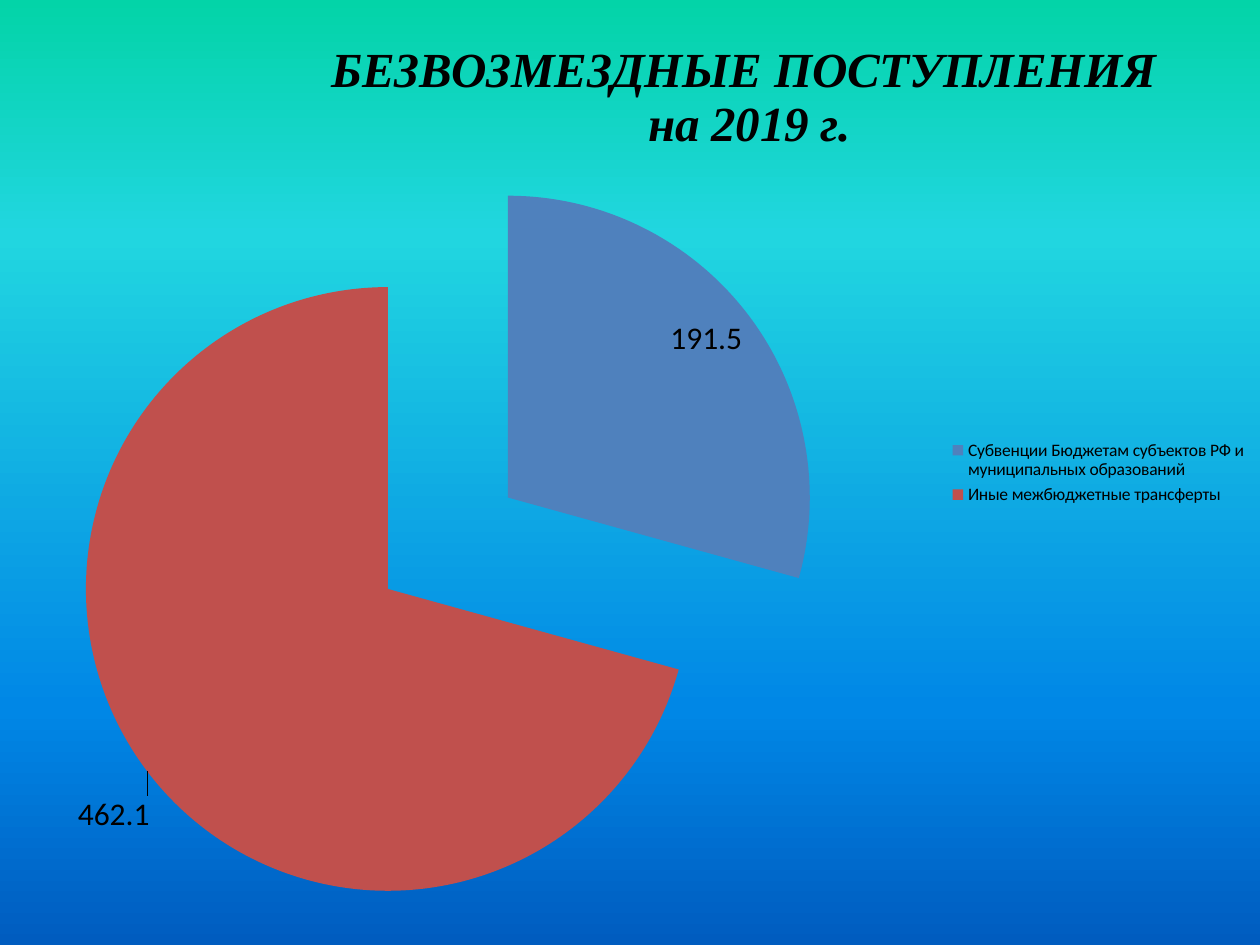
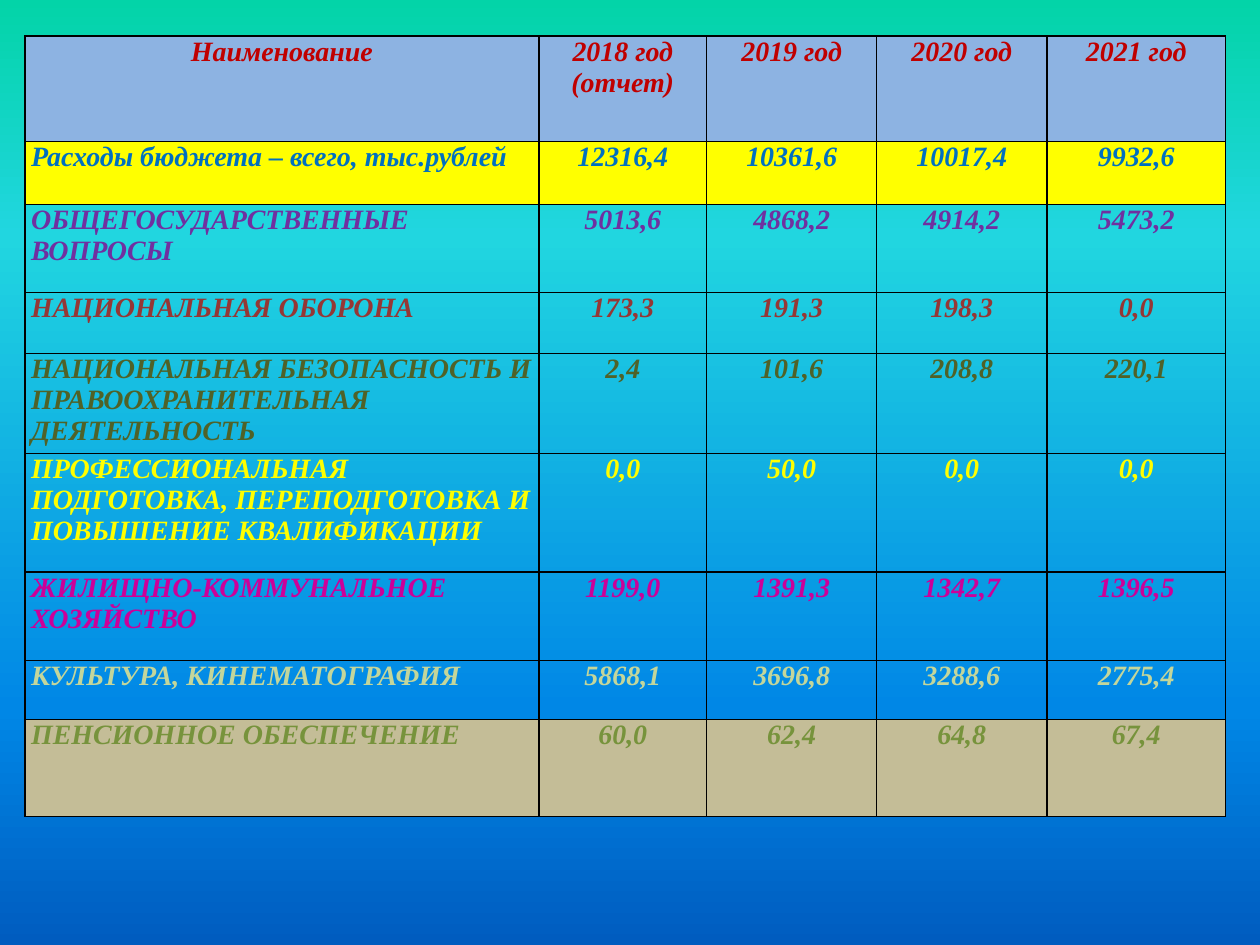
from lxml import etree
from pptx import Presentation
from pptx.chart import data as chart_data
from pptx.dml import color
from pptx.enum import chart as chart_enum, text
from pptx.oxml import ns, xmlchemy
from pptx.util import Pt

RGB = color.RGBColor
BLACK = RGB(0x00, 0x00, 0x00)
BLUE, RED = RGB(0x4F, 0x81, 0xBD), RGB(0xC0, 0x50, 0x4D)
HEADER_FILL, HEADER_TEXT = RGB(0x8D, 0xB3, 0xE2), RGB(0xC0, 0x00, 0x00)
YELLOW, TOTAL_TEXT = RGB(0xFF, 0xFF, 0x00), RGB(0x00, 0x70, 0xC0)
PURPLE, BROWN = RGB(0x70, 0x30, 0xA0), RGB(0x95, 0x37, 0x35)
DARK_GREEN, MAGENTA = RGB(0x4F, 0x62, 0x28), RGB(0xCC, 0x00, 0x99)
PALE_GREEN, OLIVE = RGB(0xC3, 0xD6, 0x9B), RGB(0x77, 0x93, 0x3C)
TAN = RGB(0xC4, 0xBD, 0x97)
BACKGROUND_STOPS = [
    (0, RGB(0x03, 0xD4, 0xA8)),
    (25, RGB(0x21, 0xD6, 0xE0)),
    (75, RGB(0x00, 0x87, 0xE6)),
    (100, RGB(0x00, 0x5C, 0xBF)),
]
SERIF = {"name": "Times New Roman", "bold": True, "italic": True}
WIDTH, HEIGHT = 720, 540


def apply_format(target, values):
    for name, value in values.items():
        if name == "color":
            target.color.rgb = value
        else:
            setattr(target, name, value)


def set_layout(element, index, **values):
    """Give a chart part a manual layout as child number index."""
    for old in element.findall(ns.qn("c:layout")):
        element.remove(old)
    layout = etree.Element(ns.qn("c:layout"))
    manual = etree.SubElement(layout, ns.qn("c:manualLayout"))
    for name, value in values.items():
        etree.SubElement(manual, ns.qn(f"c:{name}")).set("val", str(value))
    element.insert(index, layout)


deck = Presentation()
deck.slide_width, deck.slide_height = Pt(WIDTH), Pt(HEIGHT)

# Shared gradient background on the master
master = deck.slide_master
fill = master.background.fill
fill.gradient()
fill.gradient_angle = 270
stop_list = master.element.find(".//" + ns.qn("a:gsLst"))
for stop in list(stop_list):
    stop_list.remove(stop)
for percent, shade in BACKGROUND_STOPS:
    stop = etree.SubElement(stop_list, ns.qn("a:gs"), pos=str(percent * 1000))
    etree.SubElement(stop, ns.qn("a:srgbClr"), val=str(shade))
chart_page, table_page = [deck.slides.add_slide(deck.slide_layouts[6]) for _ in range(2)]

# Slide 1: pie of transfers
transfers = chart_data.CategoryChartData()
transfers.categories = [
    "Субвенции Бюджетам субъектов РФ и муниципальных образований",
    "Иные межбюджетные трансферты",
]
transfers.add_series("Series 1", [191.5, 462.1])
pie = chart_page.shapes.add_chart(
    chart_enum.XL_CHART_TYPE.PIE, 0, 0, Pt(WIDTH), Pt(HEIGHT), transfers
).chart
apply_format(pie.font, {"name": "Calibri", "size": Pt(18), "color": BLACK})

# Chart title
pie.has_title = True
title = pie.chart_title
frame = title.text_frame
for number, line in enumerate(["БЕЗВОЗМЕЗДНЫЕ ПОСТУПЛЕНИЯ ", "на 2019 г."]):
    para = frame.add_paragraph() if number else frame.paragraphs[0]
    para.alignment = text.PP_ALIGN.CENTER
    span = para.add_run()
    span.text = line
    apply_format(span.font, {**SERIF, "size": Pt(28), "color": BLACK})
title.include_in_layout = False
set_layout(title._element, 1, xMode="edge", yMode="edge", x=0.26, y=0.04)

# Legend and plot area
pie.has_legend = True
apply_format(pie.legend, {"position": chart_enum.XL_LEGEND_POSITION.RIGHT,
                          "include_in_layout": False})
apply_format(pie.legend.font, {"name": "Calibri", "size": Pt(10), "color": BLACK})
plot_area = pie._chartSpace.chart.plotArea
set_layout(plot_area, 0, layoutTarget="inner", xMode="edge", yMode="edge",
           x=0.056, y=0.154, w=0.599, h=0.842)

# Slices pulled apart, with their values
plot = pie.plots[0]
plot.vary_by_categories = True
series = plot.series[0]
for number, shade in enumerate([BLUE, RED]):
    slice_fill = series.points[number].format.fill
    slice_fill.solid()
    slice_fill.fore_color.rgb = shade
explosion = etree.Element(ns.qn("c:explosion"), val="25")
series._element.find(ns.qn("c:dPt")).addprevious(explosion)
INSIDE = chart_enum.XL_LABEL_POSITION.INSIDE_END
apply_format(series.data_labels, {"show_value": True, "position": INSIDE})
apply_format(series.data_labels.font, {"name": "Calibri", "size": Pt(18), "color": BLACK})
series.points[1].data_label.position = INSIDE
moved_label = series._element.find(".//" + ns.qn("c:dLbl"))
set_layout(moved_label, 1, x=-0.06, y=0.07)

# Slide 2: expenditure table as (text colour, fill, cells)
ROWS = [
    (HEADER_TEXT, HEADER_FILL,
     ["Наименование", "2018 год (отчет)", "2019 год", "2020 год", "2021 год"]),
    (TOTAL_TEXT, YELLOW,
     ["Расходы бюджета – всего, тыс.рублей", "12316,4", "10361,6", "10017,4", "9932,6"]),
    (PURPLE, None,
     ["ОБЩЕГОСУДАРСТВЕННЫЕ ВОПРОСЫ", "5013,6", "4868,2", "4914,2", "5473,2"]),
    (BROWN, None, ["НАЦИОНАЛЬНАЯ ОБОРОНА", "173,3", "191,3", "198,3", "0,0"]),
    (DARK_GREEN, None,
     ["НАЦИОНАЛЬНАЯ БЕЗОПАСНОСТЬ И ПРАВООХРАНИТЕЛЬНАЯ ДЕЯТЕЛЬНОСТЬ",
      "2,4", "101,6", "208,8", "220,1"]),
    (YELLOW, None,
     ["ПРОФЕССИОНАЛЬНАЯ ПОДГОТОВКА, ПЕРЕПОДГОТОВКА И ПОВЫШЕНИЕ КВАЛИФИКАЦИИ",
      "0,0", "50,0", "0,0", "0,0"]),
    (MAGENTA, None,
     ["ЖИЛИЩНО-КОММУНАЛЬНОЕ ХОЗЯЙСТВО", "1199,0", "1391,3", "1342,7", "1396,5"]),
    (PALE_GREEN, None,
     ["КУЛЬТУРА, КИНЕМАТОГРАФИЯ", "5868,1", "3696,8", "3288,6", "2775,4"]),
    (OLIVE, TAN, ["ПЕНСИОННОЕ ОБЕСПЕЧЕНИЕ", "60,0", "62,4", "64,8", "67,4"]),
]
COLUMN_WIDTHS = [293.8, 95.8, 97.2, 97.2, 102.2]
ROW_HEIGHTS = [60.2, 36, 50.4, 34.6, 57.2, 67.9, 50.4, 33.8, 55.4]
CELL_FORMAT = {"margin_left": Pt(3.6), "margin_right": Pt(3.6),
               "margin_top": 0, "margin_bottom": 0,
               "vertical_anchor": text.MSO_ANCHOR.TOP}

table = table_page.shapes.add_table(
    len(ROWS), len(COLUMN_WIDTHS), Pt(14.2), Pt(20.7),
    Pt(sum(COLUMN_WIDTHS)), Pt(sum(ROW_HEIGHTS))
).table
apply_format(table, {"first_row": False, "horz_banding": False})
for column, width in zip(table.columns, COLUMN_WIDTHS):
    column.width = Pt(width)
for row, height in zip(table.rows, ROW_HEIGHTS):
    row.height = Pt(height)

for row_number, (text_color, row_fill, values) in enumerate(ROWS):
    for column_number, value in enumerate(values):
        cell = table.cell(row_number, column_number)
        apply_format(cell, CELL_FORMAT)
        para = cell.text_frame.paragraphs[0]
        is_name = column_number == 0 and row_number > 0
        para.alignment = text.PP_ALIGN.LEFT if is_name else text.PP_ALIGN.CENTER
        span = para.add_run()
        span.text = value
        apply_format(span.font, {**SERIF, "size": Pt(16), "color": text_color})

        # Black border on each side, then the fill
        properties = cell._tc.get_or_add_tcPr()
        for side in ["lnL", "lnR", "lnT", "lnB"]:
            border = etree.SubElement(properties, ns.qn(f"a:{side}"), w=str(Pt(1)))
            solid = etree.SubElement(border, ns.qn("a:solidFill"))
            etree.SubElement(solid, ns.qn("a:srgbClr"), val=str(BLACK))
        if row_fill is None:
            cell.fill.background()
        else:
            cell.fill.solid()
            cell.fill.fore_color.rgb = row_fill

deck.save("out.pptx")
